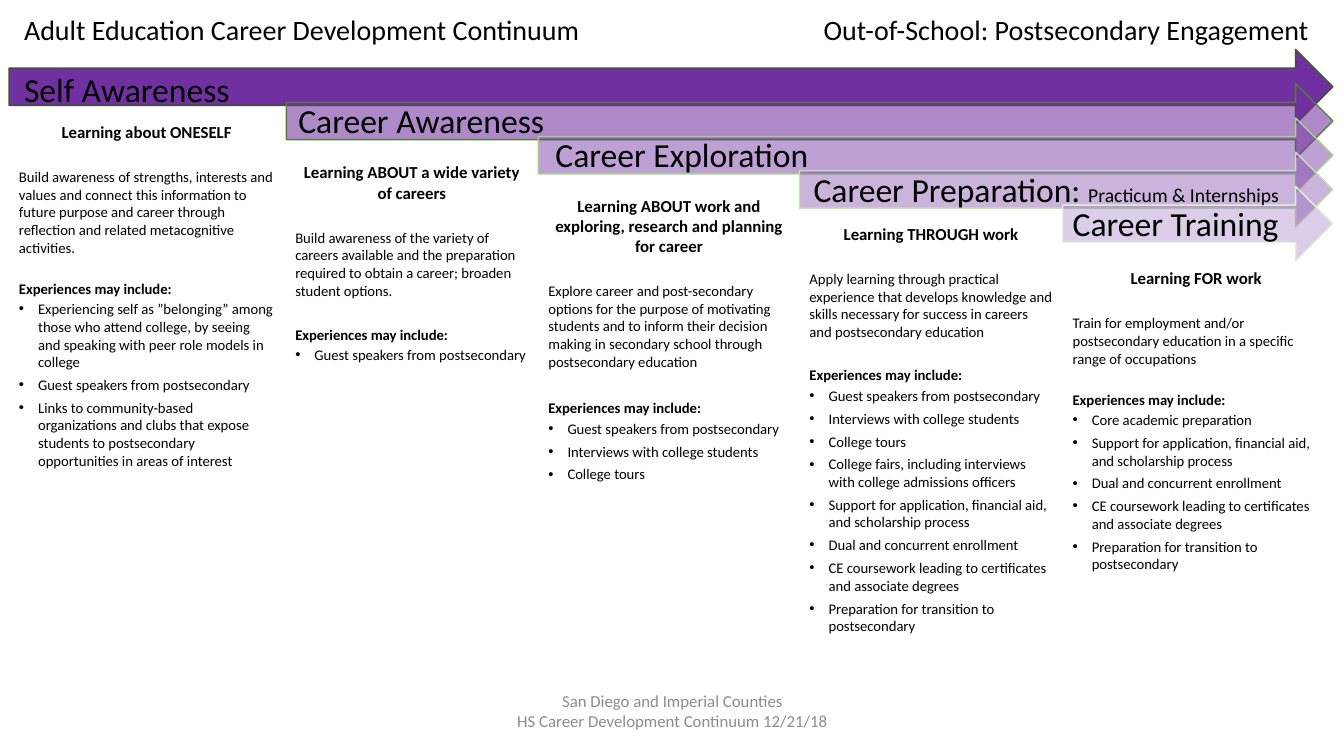
"""Build the adult education career development continuum slide."""
from lxml.etree import SubElement
from pptx import Presentation
from pptx.dml.color import RGBColor
from pptx.enum.shapes import MSO_SHAPE
from pptx.enum.text import MSO_ANCHOR, MSO_AUTO_SIZE, PP_ALIGN
from pptx.oxml.ns import qn
from pptx.util import Inches, Pt

PURPLE = "7030A0"
ARROW_RIGHT, ARROW_TOP, ARROW_STEP, ARROW_HEIGHT = 13.22, 0.49, 0.34, 0.74
GUESTS = "Guest speakers from postsecondary"
INTERVIEWS = "Interviews with college students"
TOURS = "College tours"
TRANSITION = [
    "Support for application, financial aid, and scholarship process",
    "Dual and concurrent enrollment",
    "CE coursework leading to certificates and associate degrees",
    "Preparation for transition to postsecondary",
]

STAGES = [
    dict(name="Self Awareness", left=0.09, line="385723", opacity=100,
         label=(0.14, 0.63, 4.42), column=(0.09, 1.16, 2.73, 3.82),
         heading="Learning about ONESELF", gap=16.8,
         summary="Build awareness of strengths, interests and values and connect this information "
                 "to future purpose and career through reflection and related metacognitive activities.",
         experiences=["Experiencing self as ”belonging” among those who attend college, by seeing "
                      "and speaking with peer role models in college", GUESTS,
                      "Links to community-based organizations and clubs that expose students to "
                      "postsecondary opportunities in areas of interest"]),
    dict(name="Career Awareness", left=2.84, line="548235", opacity=57,
         label=(2.86, 0.94, 4.42), column=(2.83, 1.56, 2.51, 2.41),
         heading="Learning ABOUT a wide variety of careers", gap=18.8,
         summary="Build awareness of the variety of careers available and the preparation "
                 "required to obtain a career; broaden student options.",
         experiences=[GUESTS]),
    dict(name="Career Exploration", left=5.34, line="A9D18E", opacity=45,
         label=(5.41, 1.28, 4.42), column=(5.34, 1.89, 2.59, 3.53),
         heading="Learning ABOUT work and exploring, research and planning for career", gap=20.8,
         summary="Explore career and post-secondary options for the purpose of motivating students "
                 "and to inform their decision making in secondary school through postsecondary education",
         experiences=[GUESTS, INTERVIEWS, TOURS]),
    dict(name="Career Preparation: ", left=7.93, line="C5E0B4", opacity=36,
         label=(7.97, 1.63, 4.85), column=(7.93, 2.17, 2.61, 4.58),
         heading="Learning THROUGH work", gap=18.5,
         summary="Apply learning through practical experience that develops knowledge and skills "
                 "necessary for success in careers and postsecondary education",
         experiences=[GUESTS, INTERVIEWS, TOURS,
                      "College fairs, including interviews with college admissions officers"] + TRANSITION),
    dict(name="Career Training", left=10.54, line="E2F0D9", opacity=24,
         label=(10.54, 1.96, 2.32), column=(10.54, 2.61, 2.65, 3.67),
         heading="Learning FOR work", gap=16.8,
         summary="Train for employment and/or postsecondary education in a specific range of occupations",
         experiences=["Core academic preparation"] + TRANSITION),
]

deck = Presentation()
deck.slide_width, deck.slide_height = Inches(13.33), Inches(7.5)
page = deck.slides.add_slide(deck.slide_layouts[6])


def add_box(left, top, width, height):
    box = page.shapes.add_textbox(Inches(left), Inches(top), Inches(width), Inches(height))
    box.text_frame.word_wrap = True
    box.text_frame.auto_size = MSO_AUTO_SIZE.SHAPE_TO_FIT_TEXT
    return box.text_frame


def add_span(para, text, size, bold=False, color="000000"):
    span = para.add_run()
    span.text = text
    for name, value in dict(size=Pt(size), bold=bold, name="Calibri").items():
        setattr(span.font, name, value)
    span.font.color.rgb = RGBColor.from_string(color)


title = add_box(0.14, 0.08, 12.99, 0.44).paragraphs[0]
tabs = SubElement(title._p.get_or_add_pPr(), qn("a:tabLst"))
SubElement(tabs, qn("a:tab"), pos=str(Inches(12.74)), algn="r")
add_span(title, "Adult Education Career Development Continuum\tOut-of-School: Postsecondary Engagement", 20)

for index, stage in enumerate(STAGES):
    arrow = page.shapes.add_shape(
        MSO_SHAPE.RIGHT_ARROW, Inches(stage["left"]), Inches(ARROW_TOP + index * ARROW_STEP),
        Inches(ARROW_RIGHT - stage["left"]), Inches(ARROW_HEIGHT))
    arrow.shadow.inherit = False
    arrow.fill.solid()
    arrow.fill.fore_color.rgb = RGBColor.from_string(PURPLE)
    arrow.line.color.rgb = RGBColor.from_string(stage["line"])
    arrow.line.width = Pt(1)
    if stage["opacity"] < 100:
        tint = arrow._element.spPr.find(qn("a:solidFill"))[0]
        SubElement(tint, qn("a:alpha"), val=str(stage["opacity"] * 1000))

for stage in STAGES:
    label = add_box(*stage["label"], 0.5).paragraphs[0]
    add_span(label, stage["name"], 24)
    if stage["name"].startswith("Career Preparation"):
        add_span(label, "Practicum & Internships", 14)

for stage in STAGES:
    frame = add_box(*stage["column"])
    heading = frame.paragraphs[0]
    heading.alignment = PP_ALIGN.CENTER
    heading.space_after = Pt(18.6)
    add_span(heading, stage["heading"], 12, bold=True)
    summary = frame.add_paragraph()
    summary.space_after = Pt(stage["gap"])
    add_span(summary, stage["summary"], 10.5)
    intro = frame.add_paragraph()
    intro.space_after = Pt(2)
    add_span(intro, "Experiences may include:", 10.5, bold=True)
    for experience in stage["experiences"]:
        item = frame.add_paragraph()
        item.space_after = Pt(3.7)
        add_span(item, experience, 10.5)
        layout = item._p.get_or_add_pPr()
        layout.set("marL", str(Inches(0.19)))
        layout.set("indent", str(Inches(-0.19)))
        SubElement(layout, qn("a:buFont"), typeface="Arial")
        SubElement(layout, qn("a:buChar"), char="•")

footer = add_box(4.42, 6.95, 4.5, 0.4)
footer.auto_size = MSO_AUTO_SIZE.NONE
footer.vertical_anchor = MSO_ANCHOR.MIDDLE
footer.margin_bottom = Inches(0.25)
footer_paras = [footer.paragraphs[0], footer.add_paragraph()]
footer_lines = ["San Diego and Imperial Counties", "HS Career Development Continuum 12/21/18"]
for para, text in zip(footer_paras, footer_lines):
    para.alignment = PP_ALIGN.CENTER
    add_span(para, text, 12, color="8C8C8C")

deck.save("out.pptx")
